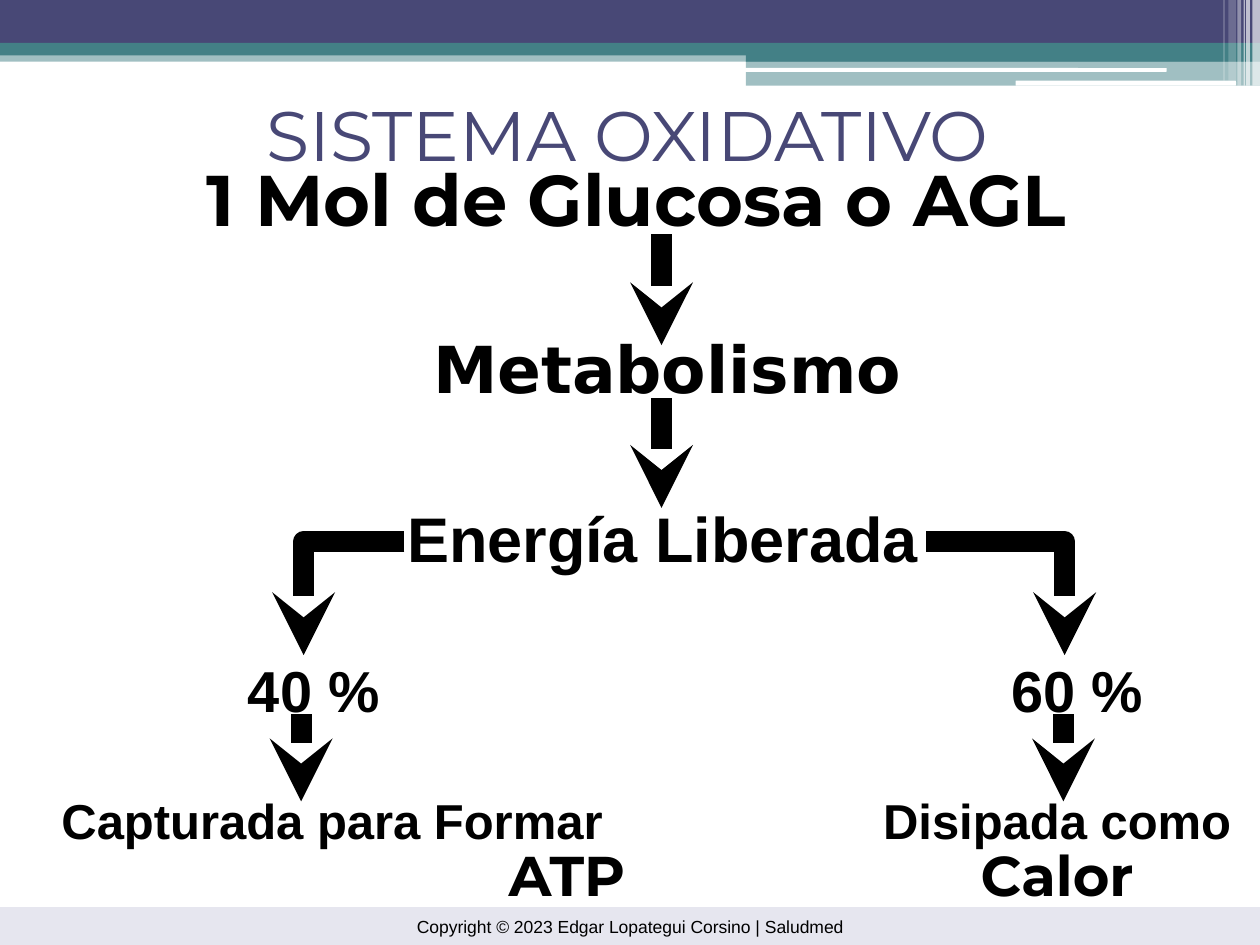
"""Build the oxidative system energy slide."""
from dataclasses import dataclass

from lxml import etree
from pptx import Presentation
from pptx.dml.color import RGBColor
from pptx.enum.shapes import MSO_CONNECTOR, MSO_SHAPE
from pptx.enum.text import MSO_ANCHOR, PP_ALIGN
from pptx.oxml.ns import qn
from pptx.util import Inches, Pt

RECTANGLE, ROUNDED = MSO_SHAPE.RECTANGLE, MSO_SHAPE.ROUNDED_RECTANGLE
STRAIGHT = MSO_CONNECTOR.STRAIGHT
CENTER, RIGHT = PP_ALIGN.CENTER, PP_ALIGN.RIGHT
TOP, MIDDLE = MSO_ANCHOR.TOP, MSO_ANCHOR.MIDDLE


@dataclass(frozen=True)
class Theme:
    indigo: str = "484876"
    teal: str = "438086"
    white: str = "FFFFFF"
    black: str = "000000"
    footer: str = "E6E6EF"
    shadow: str = "DDDDDD"
    sans: str = "Arial"
    display: str = "Montserrat"
    wide: str = "DejaVu Sans"
    footer_size: int = 10
    label_size: int = 28
    result_size: int = 32
    percent_size: int = 33
    energy_size: int = 36
    process_size: int = 37
    title_size: int = 40
    source_size: int = 41
    arrow_width: int = 12


THEME = Theme()


@dataclass(frozen=True)
class Band:
    left: float
    top: float
    width: float
    height: float
    color: str
    opacity: int = 100
    rounded: bool = False


@dataclass(frozen=True)
class Line:
    text: str
    size: int
    font: str = THEME.sans
    alignment: PP_ALIGN = CENTER
    bold: bool = True
    color: str = THEME.black


@dataclass(frozen=True)
class Label:
    left: float
    top: float
    width: float
    height: float
    lines: tuple[Line, ...]
    spacing: float = 1.0
    shadow: bool = False
    anchor: MSO_ANCHOR = TOP
    top_inset: float = 0.09


@dataclass(frozen=True)
class Arrow:
    points: tuple[tuple[float, float], ...]


BANDS = (
    Band(0, 0.4, 10, 0.09, THEME.teal, 50),
    Band(0, 0, 10, 0.34, THEME.indigo),
    Band(0, 0.34, 10, 0.1, THEME.teal),
    Band(5.92, 0.39, 4.08, 0.1, THEME.teal),
    Band(5.92, 0.48, 4.08, 0.2, THEME.teal, 50),
    Band(5.91, 0.54, 3.35, 0.03, THEME.white, rounded=True),
    Band(8.06, 0.64, 1.75, 0.04, THEME.white, rounded=True),
    Band(9.94, 0, 0.06, 0.68, THEME.white, 65),
    Band(9.89, 0, 0.03, 0.68, THEME.white, 65),
    Band(9.87, 0, 0.01, 0.68, THEME.white, 60),
    Band(9.82, 0, 0.03, 0.68, THEME.white, 40),
    Band(9.75, 0, 0.06, 0.64, THEME.white, 20),
    Band(9.71, 0, 0.01, 0.64, THEME.white, 30),
    Band(0, 7.2, 10, 0.3, THEME.footer),
)

LABELS = (
    Label(0, 7.2, 10, 0.3, (
        Line("Copyright © 2023 Edgar Lopategui Corsino | Saludmed",
             THEME.footer_size, bold=False),), anchor=MIDDLE, top_inset=0.05),
    Label(0.98, 1.24, 8.15, 0.5, (
        Line("1 Mol de Glucosa o AGL", THEME.source_size, THEME.display),),
        spacing=0.9, top_inset=0.07),
    Label(3.26, 2.52, 4.07, 0.67, (
        Line("Metabolismo", THEME.process_size, THEME.wide),)),
    Label(2.86, 4.04, 4.8, 0.54, (
        Line("Energía Liberada", THEME.energy_size),), 0.7, True),
    Label(1.67, 5.11, 1.64, 0.67, (Line("40 %", THEME.percent_size),)),
    Label(7.73, 5.11, 1.64, 0.67, (Line("60 %", THEME.percent_size),)),
    Label(0.21, 6.31, 4.85, 0.88, (
        Line("Capturada para Formar", THEME.label_size),
        Line("ATP", THEME.result_size, THEME.display, RIGHT)), 0.7, True),
    Label(6.89, 6.31, 3, 0.88, (
        Line("Disipada como", THEME.label_size),
        Line("Calor", THEME.result_size, THEME.display)), 0.7, True),
    Label(-0.02, 0.76, 10, 0.47, (
        Line("SISTEMA OXIDATIVO", THEME.title_size, THEME.display,
             bold=False, color=THEME.indigo),),
        spacing=1.2, anchor=MIDDLE, top_inset=0.05),
)

ARROWS = (
    Arrow(((5.25, 1.86), (5.25, 2.74))),
    Arrow(((5.25, 3.16), (5.25, 4.03))),
    Arrow(((3.21, 4.3), (2.41, 4.3), (2.41, 5.2))),
    Arrow(((7.35, 4.3), (8.45, 4.3), (8.45, 5.2))),
    Arrow(((2.39, 5.67), (2.39, 6.36))),
    Arrow(((8.44, 5.67), (8.44, 6.36))),
)


def draw_band(slide, band: Band) -> None:
    kind = ROUNDED if band.rounded else RECTANGLE
    shape = slide.shapes.add_shape(
        kind, Inches(band.left), Inches(band.top), Inches(band.width), Inches(band.height))
    shape.shadow.inherit = False
    shape.fill.solid()
    shape.fill.fore_color.rgb = RGBColor.from_string(band.color)
    shape.line.fill.background()
    if band.opacity < 100:
        color = shape.fill._xPr.find(".//" + qn("a:srgbClr"))
        etree.SubElement(color, qn("a:alpha"), val=str(band.opacity * 1000))


def add_text_shadow(font) -> None:
    effects = etree.Element(qn("a:effectLst"))
    shadow = etree.SubElement(
        effects, qn("a:outerShdw"), dist="38100", dir="2700000", algn="tl")
    etree.SubElement(shadow, qn("a:srgbClr"), val=THEME.shadow)
    font._element.find(qn("a:solidFill")).addnext(effects)


def draw_label(slide, label: Label) -> None:
    box = slide.shapes.add_textbox(
        Inches(label.left), Inches(label.top), Inches(label.width), Inches(label.height))
    text_frame = box.text_frame
    text_frame.word_wrap = True
    text_frame.vertical_anchor = label.anchor
    text_frame.margin_top = Inches(label.top_inset)
    text_frame.text = "\n".join(line.text for line in label.lines)
    for index, (paragraph, line) in enumerate(zip(text_frame.paragraphs, label.lines)):
        paragraph.alignment = line.alignment
        paragraph.line_spacing = label.spacing
        if index:
            paragraph.space_before = Pt(line.size * 0.2)
        font = paragraph.runs[0].font
        font.name = line.font
        font.size = Pt(line.size)
        font.bold = line.bold
        font.color.rgb = RGBColor.from_string(line.color)
        if label.shadow:
            add_text_shadow(font)


def draw_arrow(slide, arrow: Arrow) -> None:
    start, *corners = [(Inches(x), Inches(y)) for x, y in arrow.points]
    if len(corners) == 1:
        shape = slide.shapes.add_connector(STRAIGHT, *start, *corners[0])
        etree.SubElement(shape._element.spPr, qn("a:effectLst"))
    else:
        builder = slide.shapes.build_freeform(*start)
        builder.add_line_segments(corners, close=False)
        shape = builder.convert_to_shape()
        shape.shadow.inherit = False
        shape.fill.background()
    shape.line.color.rgb = RGBColor.from_string(THEME.black)
    shape.line.width = Pt(THEME.arrow_width)
    outline = shape.line._get_or_add_ln()
    etree.SubElement(outline, qn("a:round"))
    etree.SubElement(outline, qn("a:tailEnd"), type="stealth")


def main() -> None:
    presentation = Presentation()
    presentation.slide_width, presentation.slide_height = Inches(10), Inches(7.5)
    slide = presentation.slides.add_slide(presentation.slide_layouts[6])
    for items, draw in ((BANDS, draw_band), (ARROWS, draw_arrow), (LABELS, draw_label)):
        for item in items:
            draw(slide, item)
    presentation.save("out.pptx")


if __name__ == "__main__":
    main()
